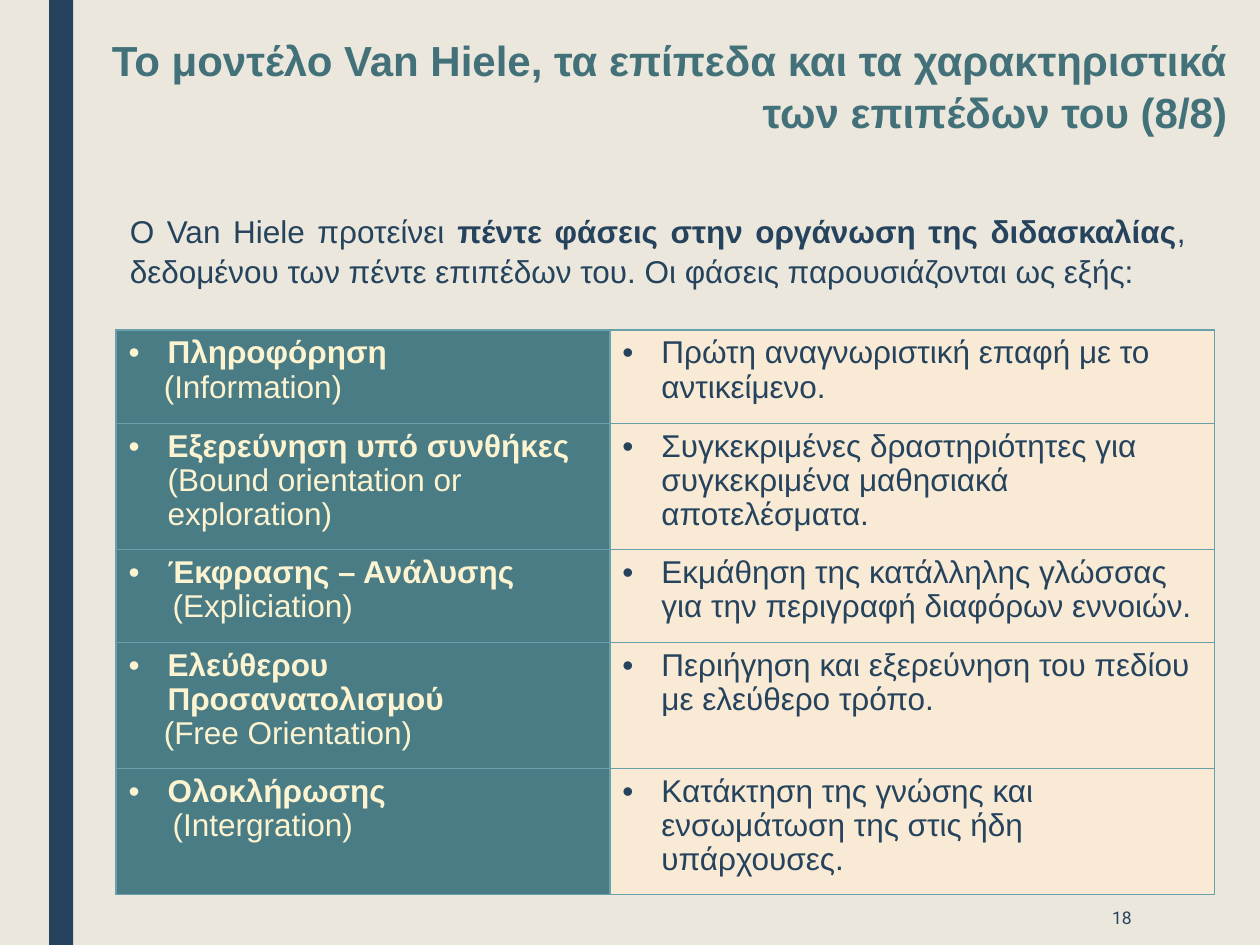
from lxml.etree import SubElement
from pptx import Presentation
from pptx.dml.color import RGBColor
from pptx.enum.shapes import MSO_SHAPE
from pptx.enum.text import MSO_ANCHOR, MSO_AUTO_SIZE, PP_ALIGN
from pptx.oxml.ns import qn
from pptx.util import Inches, Pt

NAVY = RGBColor(0x26, 0x43, 0x5D)
TEAL = RGBColor(0x43, 0x71, 0x79)
TEAL_FILL = RGBColor(0x4A, 0x7C, 0x85)
BORDER = RGBColor(0x69, 0xA1, 0xAB)
CREAM = RGBColor(0xFC, 0xF3, 0xD1)
PEACH = RGBColor(0xF8, 0xEA, 0xD4)
PAPER = RGBColor(0xEB, 0xE7, 0xDD)

COLUMNS = (3.92, 4.8)
LINE_ROWS = {2: 0.74, 3: 1.0}  # row height by number of text lines
HANG = 0.31

# lines, Greek name, English name, its indent (None: same paragraph), description
PHASES = [
    (2, "Πληροφόρηση", "(Information)", 0.28,
     "Πρώτη αναγνωριστική επαφή με το αντικείμενο."),
    (3, "Εξερεύνηση υπό συνθήκες ", "(Bound orientation or exploration)", None,
     "Συγκεκριμένες δραστηριότητες για συγκεκριμένα μαθησιακά αποτελέσματα."),
    (2, "Έκφρασης – Ανάλυσης", "(Expliciation)", 0.35,
     "Εκμάθηση της κατάλληλης γλώσσας για την περιγραφή διαφόρων εννοιών."),
    (3, "Ελεύθερου Προσανατολισμού", "(Free Orientation)", 0.28,
     "Περιήγηση και εξερεύνηση του πεδίου με ελεύθερο τρόπο."),
    (3, "Ολοκλήρωσης", "(Intergration)", 0.35,
     "Κατάκτηση της γνώσης και ενσωμάτωση της στις ήδη υπάρχουσες."),
]


def place(sp, left, top, width, height):
    sp.left, sp.top = Inches(left), Inches(top)
    sp.width, sp.height = Inches(width), Inches(height)


def add_run(p, text, color, size=18, bold=False, font="Arial"):
    r = p.add_run()
    r.text = text
    r.font.name, r.font.size, r.font.bold = font, Pt(size), bold
    r.font.color.rgb = color


def set_indent(p, left, hang=0.0, bullet=None):
    pPr = p._p.get_or_add_pPr()
    pPr.set("marL", str(Inches(left)))
    pPr.set("indent", str(-Inches(hang)))
    if bullet:
        SubElement(pPr, qn("a:buFont")).set("typeface", "Arial")
        SubElement(pPr, qn("a:buChar")).set("char", bullet)
    else:
        SubElement(pPr, qn("a:buNone"))


def start_text(sp, align, anchor=MSO_ANCHOR.TOP, spacing=1.0):
    """Set up the frame of a shape and return its first paragraph."""
    tf = sp.text_frame
    tf.word_wrap = True
    tf.auto_size = MSO_AUTO_SIZE.NONE
    tf.vertical_anchor = anchor
    p = tf.paragraphs[0]
    p.alignment, p.line_spacing, p.space_before = align, spacing, Pt(0)
    return p


def format_cell(cell, fill):
    """Fill and border a cell, and return its first paragraph, bulleted."""
    tcPr = cell._tc.get_or_add_tcPr()
    for side in ("lnL", "lnR", "lnT", "lnB"):
        ln = SubElement(tcPr, qn(f"a:{side}"), w=str(Pt(1)))
        solid = SubElement(ln, qn("a:solidFill"))
        SubElement(solid, qn("a:srgbClr"), val=str(BORDER))
    cell.fill.solid()
    cell.fill.fore_color.rgb = fill
    p = cell.text_frame.paragraphs[0]
    p.line_spacing = 0.97
    set_indent(p, HANG, HANG, "•")
    return p


def add_side_bar(s, prs):
    bar = s.shapes.add_shape(MSO_SHAPE.RECTANGLE, Inches(0.39), 0,
                             Inches(0.19), prs.slide_height)
    bar.shadow.inherit = False
    bar.fill.solid()
    bar.fill.fore_color.rgb = NAVY
    bar.line.fill.background()


def add_title(s):
    title = s.shapes.title
    place(title, 0.78, 0.21, 9.06, 0.91)
    p = start_text(title, PP_ALIGN.RIGHT, spacing=1.03)
    add_run(p, "Το μοντέλο Van Hiele, τα επίπεδα και τα χαρακτηριστικά "
               "των επιπέδων του (8/8)", TEAL, 24, True)


def add_intro(s):
    body = s.placeholders[1]
    place(body, 0.93, 1.62, 8.58, 0.73)
    p = start_text(body, PP_ALIGN.JUSTIFY, spacing=1.05)
    set_indent(p, 0)
    add_run(p, "O Van Hiele προτείνει ", NAVY)
    add_run(p, "πέντε φάσεις στην οργάνωση της διδασκαλίας", NAVY, bold=True)
    add_run(p, ", δεδομένου των πέντε επιπέδων του. "
               "Οι φάσεις παρουσιάζονται ως εξής:", NAVY)


def add_phase_table(s):
    heights = [LINE_ROWS[phase[0]] for phase in PHASES]
    table = s.shapes.add_table(
        len(PHASES), len(COLUMNS), Inches(0.92), Inches(2.62),
        Inches(sum(COLUMNS)), Inches(sum(heights))).table
    table.first_row = table.horz_banding = False
    for column, width in zip(table.columns, COLUMNS):
        column.width = Inches(width)
    for row, height, phase in zip(table.rows, heights, PHASES):
        _, name, english, indent, description = phase
        row.height = Inches(height)
        name_cell, text_cell = row.cells
        p = format_cell(name_cell, TEAL_FILL)
        add_run(p, name, CREAM, bold=True)
        if indent is not None:
            p = name_cell.text_frame.add_paragraph()
            p.line_spacing = 0.97
            set_indent(p, indent)
        add_run(p, english, CREAM)
        add_run(format_cell(text_cell, PEACH), description, NAVY)


def add_page_number(s):
    box = s.shapes.add_textbox(Inches(7.77), Inches(7.06),
                               Inches(1.31), Inches(0.44))
    p = start_text(box, PP_ALIGN.RIGHT, MSO_ANCHOR.MIDDLE)
    add_run(p, "18", NAVY, 10, font="Roboto")


def main():
    prs = Presentation()
    prs.slide_width, prs.slide_height = Inches(10), Inches(7.5)
    s = prs.slides.add_slide(prs.slide_layouts[1])
    s.background.fill.solid()
    s.background.fill.fore_color.rgb = PAPER
    add_side_bar(s, prs)
    add_title(s)
    add_intro(s)
    add_phase_table(s)
    add_page_number(s)
    prs.save("out.pptx")


if __name__ == "__main__":
    main()
